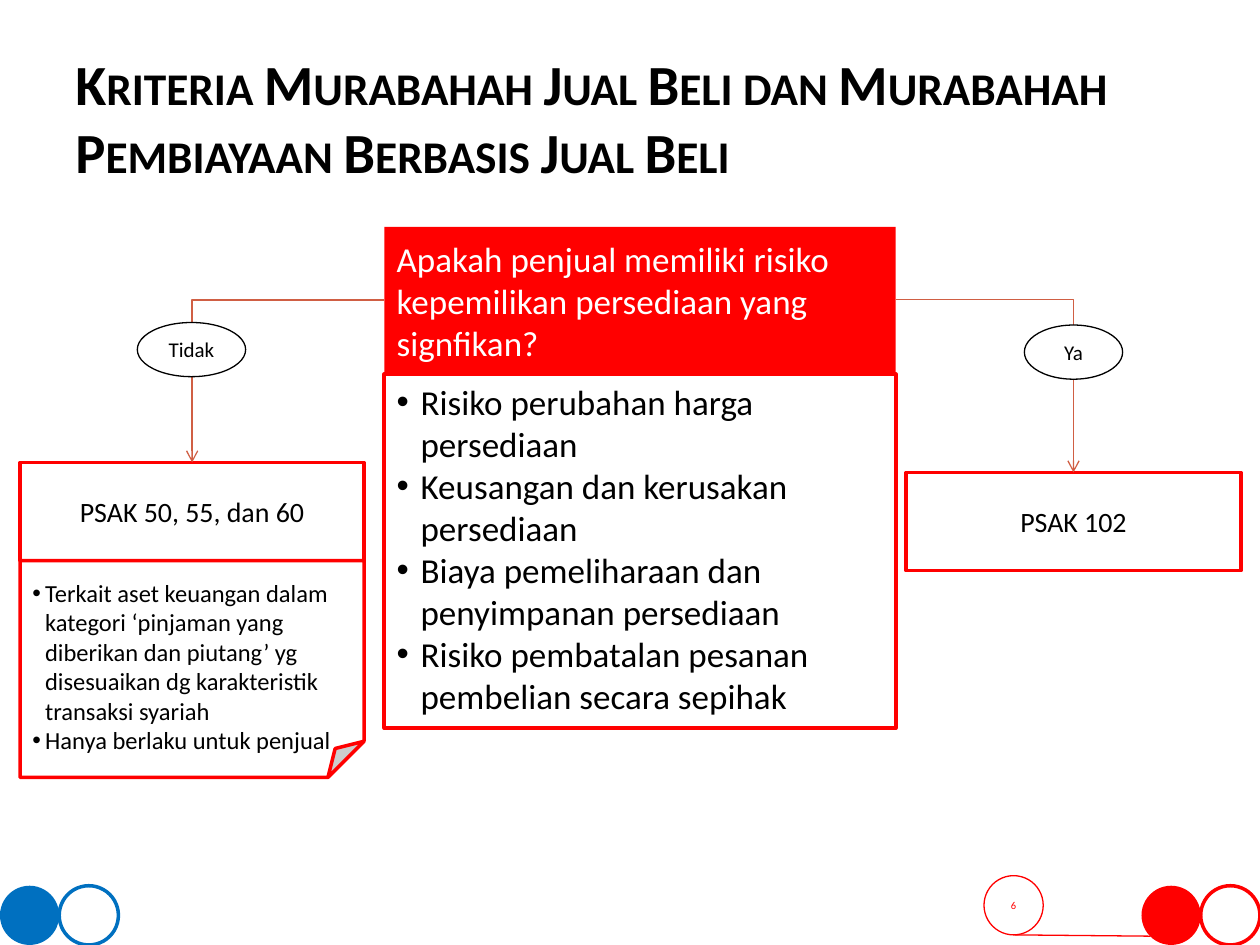
from lxml import etree
from pptx import Presentation
from pptx.dml.color import RGBColor
from pptx.enum.shapes import MSO_CONNECTOR, MSO_SHAPE
from pptx.enum.text import MSO_ANCHOR, PP_ALIGN
from pptx.oxml.ns import qn
from pptx.util import Inches, Pt

RECTANGLE, OVAL = MSO_SHAPE.RECTANGLE, MSO_SHAPE.OVAL
DECISION_LABEL, NOTE = MSO_SHAPE.FLOWCHART_CONNECTOR, MSO_SHAPE.FOLDED_CORNER
STRAIGHT, ELBOW = MSO_CONNECTOR.STRAIGHT, MSO_CONNECTOR.ELBOW
TOP, MIDDLE = MSO_ANCHOR.TOP, MSO_ANCHOR.MIDDLE
LEFT, CENTER = PP_ALIGN.LEFT, PP_ALIGN.CENTER

FONT = "Calibri"
RED, BLUE, ORANGE = "FF0000", "0070C0", "D05F44"
BLACK, WHITE = "000000", "FFFFFF"
DOT = 0.47

TITLE = "Kriteria Murabahah Jual Beli dan Murabahah Pembiayaan Berbasis Jual Beli"
QUESTION = "Apakah penjual memiliki risiko kepemilikan persediaan yang signfikan?"
RISKS = [
    "Risiko perubahan harga persediaan",
    "Keusangan dan kerusakan persediaan",
    "Biaya pemeliharaan dan penyimpanan persediaan",
    "Risiko pembatalan pesanan pembelian secara sepihak",
]
NOTES = [
    "Terkait aset keuangan dalam kategori ‘pinjaman yang diberikan dan piutang’ "
    "yg disesuaikan dg karakteristik transaksi syariah",
    "Hanya berlaku untuk penjual",
]


def color(value):
    return RGBColor.from_string(value)


def apply_format(target, values):
    for name, value in values.items():
        setattr(target, name, value)


def add_bullet(para, indent):
    properties = para._p.get_or_add_pPr()
    properties.set("marL", str(Inches(indent)))
    properties.set("indent", str(-Inches(indent)))
    etree.SubElement(properties, qn("a:buFont")).set("typeface", "Arial")
    etree.SubElement(properties, qn("a:buChar")).set("char", "•")


def write_text(box, lines, size, ink=BLACK, align=LEFT, anchor=MIDDLE, indent=0, bold=False):
    frame = box.text_frame
    apply_format(frame, {"word_wrap": True, "vertical_anchor": anchor})
    for index, line in enumerate(lines):
        para = frame.add_paragraph() if index else frame.paragraphs[0]
        para.alignment = align
        if indent:
            add_bullet(para, indent)
        span = para.add_run()
        span.text = line
        apply_format(span.font, {"name": FONT, "size": Pt(size), "bold": bold})
        span.font.color.rgb = color(ink)


def add_box(page, kind, place, fill=None, line=None, width=2):
    box = page.shapes.add_shape(kind, *map(Inches, place))
    box.shadow.inherit = False
    if fill:
        box.fill.solid()
        box.fill.fore_color.rgb = color(fill)
    else:
        box.fill.background()
    if line:
        box.line.color.rgb = color(line)
        box.line.width = Pt(width)
    else:
        box.line.fill.background()
    return box


def add_line(page, kind, start, end):
    line = page.shapes.add_connector(kind, *map(Inches, start + end))
    line.line.color.rgb = color(ORANGE)
    line.line.width = Pt(0.75)
    etree.SubElement(line._element.spPr, qn("a:effectLst"))
    return line


def add_branch(page, start, end):
    branch = add_line(page, ELBOW, start, end)
    branch._element.spPr.find(qn("a:prstGeom")).set("prst", "bentConnector2")
    outline = branch.line._get_or_add_ln()
    etree.SubElement(outline, qn("a:tailEnd")).set("type", "arrow")


def add_title(page):
    title = page.shapes.add_textbox(Inches(0.5), Inches(0.3), Inches(9), Inches(1.25))
    write_text(title, [TITLE], 32.4, bold=True)
    span = title.text_frame.paragraphs[0].runs[0]
    span.font._element.set("cap", "small")


def add_footer(page):
    dots = [(10 - DOT, None, RED), (10 - 2 * DOT, RED, None), (DOT, WHITE, BLUE), (0, BLUE, None)]
    for left, fill, line in dots:
        add_box(page, OVAL, (left, 7.03, DOT, DOT), fill, line)
    add_line(page, STRAIGHT, (8.05, 7.42), (9.13, 7.43)).line.color.rgb = color(RED)
    number = add_box(page, OVAL, (7.81, 6.95, DOT, DOT), None, RED, 0.75)
    write_text(number, ["6"], 6, RED, CENTER)


def add_decision(page):
    question = add_box(page, RECTANGLE, (3.05, 1.8, 4.06, 1.17), RED)
    write_text(question, [QUESTION], 20, WHITE)
    risks = add_box(page, RECTANGLE, (3.05, 2.97, 4.06, 2.81), WHITE, RED)
    write_text(risks, RISKS, 20, anchor=TOP, indent=0.19)


def add_outcome(page, answer, answer_place, standard, place, start):
    left, top, width, height = place
    box = add_box(page, RECTANGLE, place, WHITE, RED)
    write_text(box, [standard], 16, align=CENTER)
    add_branch(page, start, (left + width / 2, top))
    label = add_box(page, DECISION_LABEL, answer_place, WHITE, BLACK, 0.75)
    write_text(label, [answer], 12, align=CENTER)


def add_note(page):
    note = add_box(page, NOTE, (0.16, 4.45, 2.73, 1.72), WHITE, RED)
    write_text(note, NOTES, 14, indent=0.1)
    note.text_frame.margin_top = Inches(0.29)


def main():
    deck = Presentation()
    apply_format(deck, {"slide_width": Inches(10), "slide_height": Inches(7.5)})
    page = deck.slides.add_slide(deck.slide_layouts[6])
    add_footer(page)
    add_title(page)
    add_decision(page)
    add_outcome(page, "Tidak", (1.09, 2.56, 0.86, 0.43),
                "PSAK 50, 55, dan 60", (0.16, 3.67, 2.73, 0.78), (3.05, 2.38))
    add_outcome(page, "Ya", (8.13, 2.58, 0.78, 0.43),
                "PSAK 102", (7.19, 3.75, 2.66, 0.78), (7.11, 2.38))
    add_note(page)
    deck.save("out.pptx")


if __name__ == "__main__":
    main()
